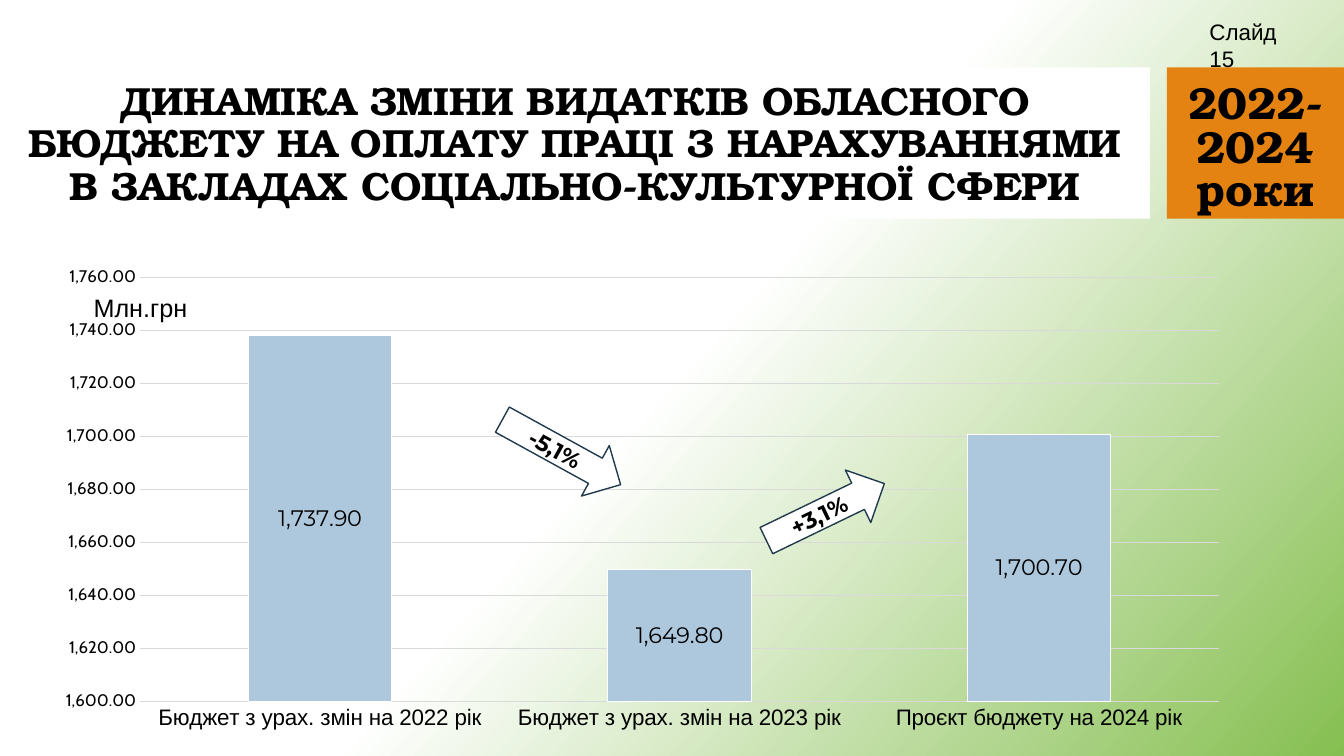
"""Build the slide on regional budget spending on pay in 2022-2024."""
from dataclasses import dataclass
from typing import Optional

import lxml.etree
import pptx
import pptx.chart.data
import pptx.dml.color
import pptx.enum.chart
import pptx.enum.shapes
import pptx.enum.text
import pptx.oxml
import pptx.oxml.ns
import pptx.util

Cm = pptx.util.Cm
Pt = pptx.util.Pt
RGBColor = pptx.dml.color.RGBColor
Align = pptx.enum.text.PP_ALIGN
Anchor = pptx.enum.text.MSO_ANCHOR
Shape = pptx.enum.shapes.MSO_SHAPE

BLACK = RGBColor(0x00, 0x00, 0x00)
WHITE = RGBColor(0xFF, 0xFF, 0xFF)
GREEN = RGBColor(0x86, 0xBF, 0x51)
ORANGE = RGBColor(0xE4, 0x83, 0x12)
NAVY = RGBColor(0x20, 0x3A, 0x4E)
PALE_BLUE = RGBColor(0xAD, 0xC8, 0xDD)
GRID_GREY = RGBColor(0xD9, 0xD9, 0xD9)
SERIF = "TeX Gyre Bonum"
NUMBER_FORMAT = "#,##0.00"


@dataclass
class Area:
    left: float
    top: float
    width: float
    height: float

    def lengths(self) -> tuple:
        return Cm(self.left), Cm(self.top), Cm(self.width), Cm(self.height)


@dataclass
class Style:
    font: str
    size: float
    bold: bool = False
    outline: Optional[float] = None


@dataclass
class Line:
    text: str
    spacing: Optional[float] = None


@dataclass
class Label:
    area: Area
    lines: list[Line]
    style: Style
    align: Align = Align.LEFT
    anchor: Anchor = Anchor.TOP


@dataclass
class Panel:
    area: Area
    color: RGBColor


@dataclass
class Change:
    area: Area
    text: str
    rotation: float


PANELS = [
    Panel(Area(0, 1.7, 28.98, 3.81), WHITE),
    Panel(Area(29.41, 1.7, 4.46, 3.81), ORANGE),
]
TITLE = Label(
    Area(0, 1.73, 28.98, 3.86),
    [Line("ДИНАМІКА ЗМІНИ ВИДАТКІВ ОБЛАСНОГО БЮДЖЕТУ НА ОПЛАТУ ПРАЦІ "
          "З НАРАХУВАННЯМИ В ЗАКЛАДАХ СОЦІАЛЬНО-КУЛЬТУРНОЇ СФЕРИ", 0.9)],
    Style(SERIF, 28, True, 0.25), Align.CENTER, Anchor.MIDDLE)
LABELS = [
    Label(Area(2.11, 7.24, 3.07, 1.02), [Line("Млн.грн")], Style("Arial", 18)),
    Label(Area(29.67, 1.75, 3.94, 3.81),
          [Line("2022-"), Line("2024", 0.8), Line("роки", 0.8)],
          Style(SERIF, 32, True, 0.75), Align.CENTER, Anchor.MIDDLE),
    Label(Area(30.23, 0.33, 2.77, 0.94), [Line("Слайд 15")], Style("Arial", 16)),
]
CHANGES = [
    Change(Area(12.45, 10.67, 3.4, 1.45), "-5,1%", 28.8),
    Change(Area(19.15, 12.17, 3.3, 1.47), "+3,1%", 334.2),
]
CHART_AREA = Area(1.12, 6.5, 30.2, 12.14)
PLOT_LAYOUT = {"x": 0.08, "y": 0.04, "w": 0.9, "h": 0.88}
SPENDING = {
    "Бюджет з урах. змін на 2022 рік": 1737.9,
    "Бюджет з урах. змін на 2023 рік": 1649.8,
    "Проєкт бюджету на 2024 рік": 1700.7,
}


def style_font(font, style: Style) -> None:
    font.name, font.size, font.bold = style.font, Pt(style.size), style.bold
    font.color.rgb = BLACK


def add_text(frame, lines: list[Line], style: Style, align, anchor) -> None:
    frame.word_wrap = True
    frame.vertical_anchor = anchor
    for index, line in enumerate(lines):
        para = frame.add_paragraph() if index else frame.paragraphs[0]
        para.alignment = align
        para.line_spacing = line.spacing
        span = para.add_run()
        span.text = line.text
        style_font(span.font, style)
        if style.outline:
            outline = pptx.oxml.parse_xml(
                f'<a:ln {pptx.oxml.ns.nsdecls("a")} w="{Pt(style.outline)}">'
                f'<a:solidFill><a:srgbClr val="{WHITE}"/></a:solidFill></a:ln>')
            span.font.fill.solid()
            span.font.color.rgb = BLACK
            span._r.get_or_add_rPr().insert(0, outline)


def add_label(slide, label: Label) -> None:
    box = slide.shapes.add_textbox(*label.area.lengths())
    add_text(box.text_frame, label.lines, label.style, label.align, label.anchor)


def add_filled_shape(slide, kind: Shape, area: Area, color: RGBColor):
    shape = slide.shapes.add_shape(kind, *area.lengths())
    shape.shadow.inherit = False
    shape.fill.solid()
    shape.fill.fore_color.rgb = color
    shape.line.fill.background()
    return shape


def add_change(slide, change: Change) -> None:
    arrow = add_filled_shape(slide, Shape.RIGHT_ARROW, change.area, WHITE)
    arrow.rotation = change.rotation
    arrow.line.color.rgb = NAVY
    arrow.line.width = Pt(1)
    add_text(arrow.text_frame, [Line(change.text)],
             Style("Montserrat", 16, True), Align.CENTER, Anchor.MIDDLE)


def set_plot_layout(chart) -> None:
    plot_area = chart.element.find(".//" + pptx.oxml.ns.qn("c:plotArea"))
    for old in plot_area.findall(pptx.oxml.ns.qn("c:layout")):
        plot_area.remove(old)
    layout = pptx.oxml.parse_xml(f'<c:layout {pptx.oxml.ns.nsdecls("c")}/>')
    manual = lxml.etree.SubElement(layout, pptx.oxml.ns.qn("c:manualLayout"))
    settings = {"layoutTarget": "inner", "xMode": "edge", "yMode": "edge", **PLOT_LAYOUT}
    for name, value in settings.items():
        lxml.etree.SubElement(manual, pptx.oxml.ns.qn("c:" + name), val=str(value))
    plot_area.insert(0, layout)


def add_spending_chart(slide) -> None:
    data = pptx.chart.data.CategoryChartData(number_format=NUMBER_FORMAT)
    data.categories = list(SPENDING)
    data.add_series("Series 1", list(SPENDING.values()))
    chart = slide.shapes.add_chart(
        pptx.enum.chart.XL_CHART_TYPE.COLUMN_STACKED, *CHART_AREA.lengths(), data).chart
    chart.has_legend = chart.has_title = False
    style_font(chart.font, Style("Cabin", 10))

    values = chart.value_axis
    values.minimum_scale, values.maximum_scale, values.major_unit = 1600, 1760, 20
    values.tick_labels.number_format = NUMBER_FORMAT
    values.tick_labels.number_format_is_linked = False
    values.major_gridlines.format.line.color.rgb = GRID_GREY
    values.major_gridlines.format.line.width = Pt(0.75)
    for axis, style in ((values, Style("Cabin", 12)),
                        (chart.category_axis, Style("Arial", 16))):
        axis.major_tick_mark = pptx.enum.chart.XL_TICK_MARK.NONE
        axis.format.line.fill.background()
        style_font(axis.tick_labels.font, style)

    plot = chart.plots[0]
    plot.gap_width, plot.overlap, plot.vary_by_categories = 150, 100, False
    columns = plot.series[0]
    columns.format.fill.solid()
    columns.format.fill.fore_color.rgb = PALE_BLUE
    columns.format.line.color.rgb = WHITE
    columns.format.line.width = Pt(0.75)
    labels = columns.data_labels
    labels.show_value = True
    labels.number_format, labels.number_format_is_linked = NUMBER_FORMAT, False
    labels.position = pptx.enum.chart.XL_LABEL_POSITION.CENTER
    style_font(labels.font, Style("Montserrat", 16))
    set_plot_layout(chart)


def paint_background(slide) -> None:
    fill = slide.background.fill
    fill.gradient()
    fill.gradient_angle = 318
    for stop, position, color in zip(fill.gradient_stops, (0.5, 1), (WHITE, GREEN)):
        stop.position = position
        stop.color.rgb = color


def main() -> None:
    deck = pptx.Presentation()
    deck.slide_width, deck.slide_height = Cm(33.87), Cm(19.05)
    slide = deck.slides.add_slide(deck.slide_layouts[6])
    paint_background(slide)
    for panel in PANELS:
        add_filled_shape(slide, Shape.RECTANGLE, panel.area, panel.color)
    add_label(slide, TITLE)
    add_spending_chart(slide)
    for change in CHANGES:
        add_change(slide, change)
    for label in LABELS:
        add_label(slide, label)
    deck.save("out.pptx")


if __name__ == "__main__":
    main()
